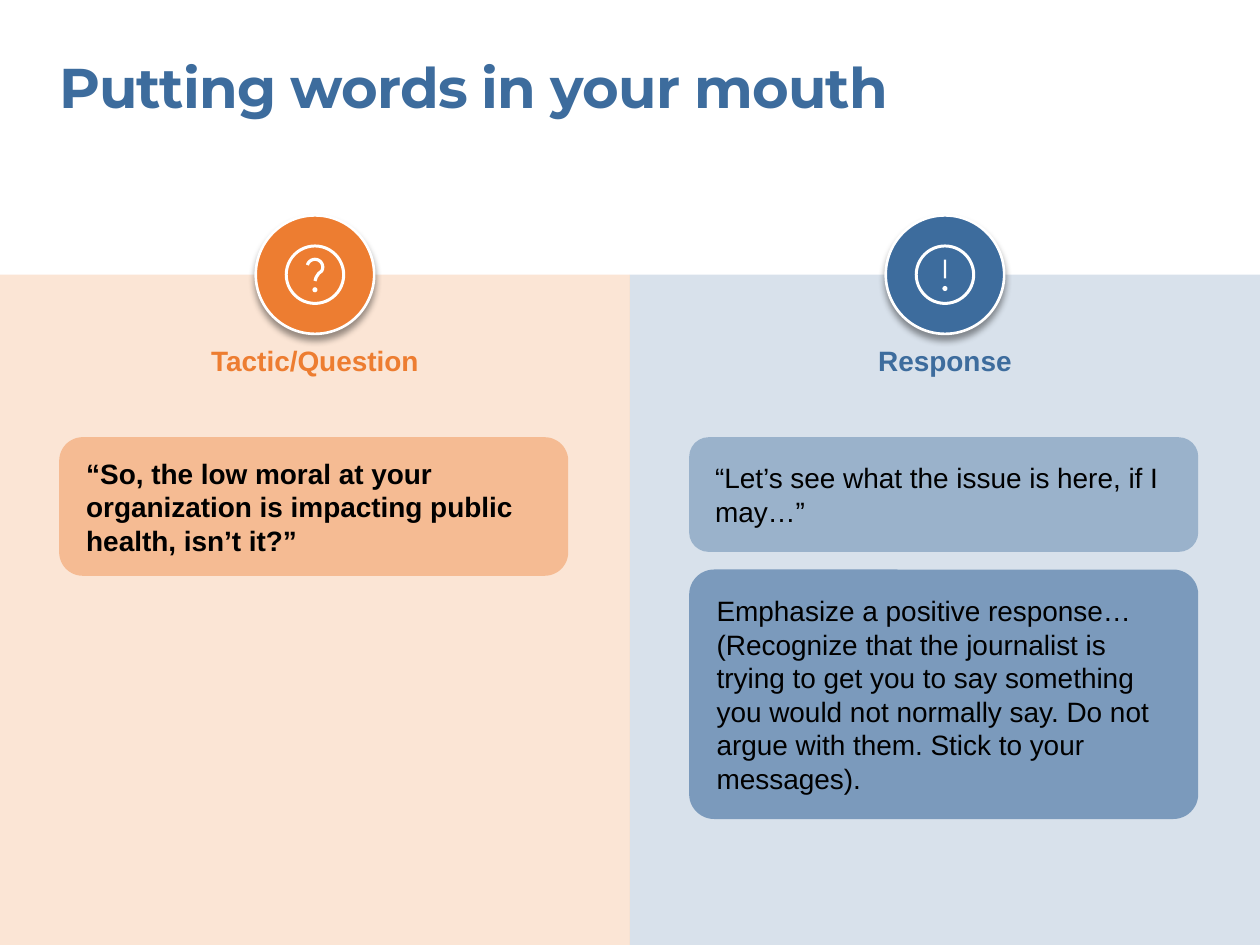
from math import cos, radians, sin

from lxml.etree import SubElement
from pptx import Presentation
from pptx.dml.color import RGBColor
from pptx.enum.shapes import MSO_SHAPE as Shape
from pptx.enum.text import MSO_ANCHOR as Anchor, MSO_AUTO_SIZE as Auto, PP_ALIGN as Align
from pptx.oxml.ns import qn
from pptx.util import Inches, Pt

ORANGE, BLUE, WHITE, BLACK = "ED7D31", "3D6C9D", "FFFFFF", "000000"


def rgb(code):
    return RGBColor.from_string(code)


def paint(item, color, alpha=100):
    item.fill.solid()
    item.fill.fore_color.rgb = rgb(color)
    if alpha < 100:
        tint = item.fill._xPr.find(".//" + qn("a:srgbClr"))
        SubElement(tint, qn("a:alpha"), val=str(alpha * 1000))


def add(slide, kind, box, color, alpha=100):
    item = slide.shapes.add_shape(kind, *map(Inches, box))
    item.shadow.inherit = False
    paint(item, color, alpha)
    item.line.fill.background()
    return item


def write(item, lines, color, size=16, bold=False, font="Arial",
          align=Align.LEFT, anchor=Anchor.TOP, pad=(0, 0)):
    frame = item.text_frame
    side, top = map(Inches, pad)
    form = {"word_wrap": True, "auto_size": Auto.NONE, "vertical_anchor": anchor,
            "margin_left": side, "margin_right": side,
            "margin_top": top, "margin_bottom": top}
    for name, value in form.items():
        setattr(frame, name, value)
    frame.text = "\n".join(lines)
    for para in frame.paragraphs:
        para.alignment = align
        for name, value in {"name": font, "size": Pt(size), "bold": bold}.items():
            setattr(para.runs[0].font, name, value)
        para.runs[0].font.color.rgb = rgb(color)


def head(slide, box, text):
    title = slide.shapes.title
    for name, value in zip(("left", "top", "width", "height"), box):
        setattr(title, name, Inches(value))
    write(title, [text], BLUE, 32, True, "Montserrat")
    title.text_frame.paragraphs[0].runs[0].font._element.set("spc", "-50")


def hook(slide, x, y):
    """Draw the curve of a question mark: an arc, then a stem."""
    arc = [(x + 0.062 * cos(radians(a)), y - 0.06 + 0.062 * sin(radians(a)))
           for a in range(195, 391, 15)]
    points = arc + [(x + 0.03, y - 0.01), (x + 0.01, y + 0.02), (x, y + 0.05)]
    start, *rest = [(Inches(a), Inches(b)) for a, b in points]
    pen = slide.shapes.build_freeform(*start)
    pen.add_line_segments(rest, close=False)
    curve = pen.convert_to_shape()
    curve.shadow.inherit = False
    curve.fill.background()
    curve.line.color.rgb = rgb(WHITE)
    curve.line.width = Pt(1.8)


def badge(slide, box, color, asks):
    x, y, size, _ = box
    disc = add(slide, Shape.OVAL, box, color)
    disc.line.color.rgb = rgb(WHITE)
    disc.line.width = Pt(1.5)
    # Soft shadow below the disc
    effects = disc._element.spPr.find(qn("a:effectLst"))
    shade = SubElement(effects, qn("a:outerShdw"), blurRad=str(Pt(4)), dist=str(Pt(3)),
                       dir="5400000", algn="t", rotWithShape="0")
    tint = SubElement(shade, qn("a:srgbClr"), val=BLACK)
    SubElement(tint, qn("a:alpha"), val="40000")
    # Ring and mark
    x, y = x + size / 2, y + size / 2
    ring = add(slide, Shape.DONUT, (x - 0.24, y - 0.24, 0.48, 0.48), WHITE)
    ring.adjustments[0] = 0.05
    if asks:
        hook(slide, x, y)
    else:
        add(slide, Shape.RECTANGLE, (x - 0.01, y - 0.12, 0.02, 0.15), WHITE)
    dot = y + (0.12 if asks else 0.11)
    add(slide, Shape.OVAL, (x - 0.02, dot - 0.02, 0.04, 0.04), WHITE)


def card(slide, box, color, alpha, round_by, lines, bold):
    item = add(slide, Shape.ROUNDED_RECTANGLE, box, color, alpha)
    item.adjustments[0] = round_by
    write(item, lines, BLACK, bold=bold, anchor=Anchor.MIDDLE, pad=(0.16, 0.08))


def column(slide, box, color, label, cards, asks):
    x, y, wide, _ = box
    add(slide, Shape.RECTANGLE, box, color, 20)
    size = 0.94
    badge(slide, (x + (wide - size) / 2, y - size / 2, size, size), color, asks)
    name = slide.shapes.add_textbox(*map(Inches, (x, y + 0.55, wide, 0.27)))
    write(name, [label], color, bold=True, align=Align.CENTER)
    # Cards, stacked with an equal gap
    top = y + 1.29
    for high, alpha, round_by, lines in cards:
        card(slide, (x + 0.47, top, 4.04, high), color, alpha, round_by, lines, asks)
        top += high + 0.14


def main():
    deck = Presentation()
    deck.slide_width, deck.slide_height = Inches(10), Inches(7.5)
    slide = deck.slides.add_slide(deck.slide_layouts[5])
    head(slide, (0.47, 0.42, 9.02, 0.54), "Putting words in your mouth")

    asked = [(1.1, 40, 0.17, ["“So, the low moral at your organization is impacting "
                              "public health, isn’t it?”"])]
    said = [(0.91, 40, 0.17, ["“Let’s see what the issue is here, if I may…”"]),
            (1.98, 60, 0.1, ["Emphasize a positive response…",
                             "(Recognize that the journalist is trying to get you to say "
                             "something you would not normally say. Do not argue with them. "
                             "Stick to your messages)."])]
    sides = [(ORANGE, "Tactic/Question", asked, True), (BLUE, "Response", said, False)]
    for i, side in enumerate(sides):
        column(slide, (5 * i, 2.18, 5, 5.32), *side)
    deck.save("out.pptx")


if __name__ == "__main__":
    main()
